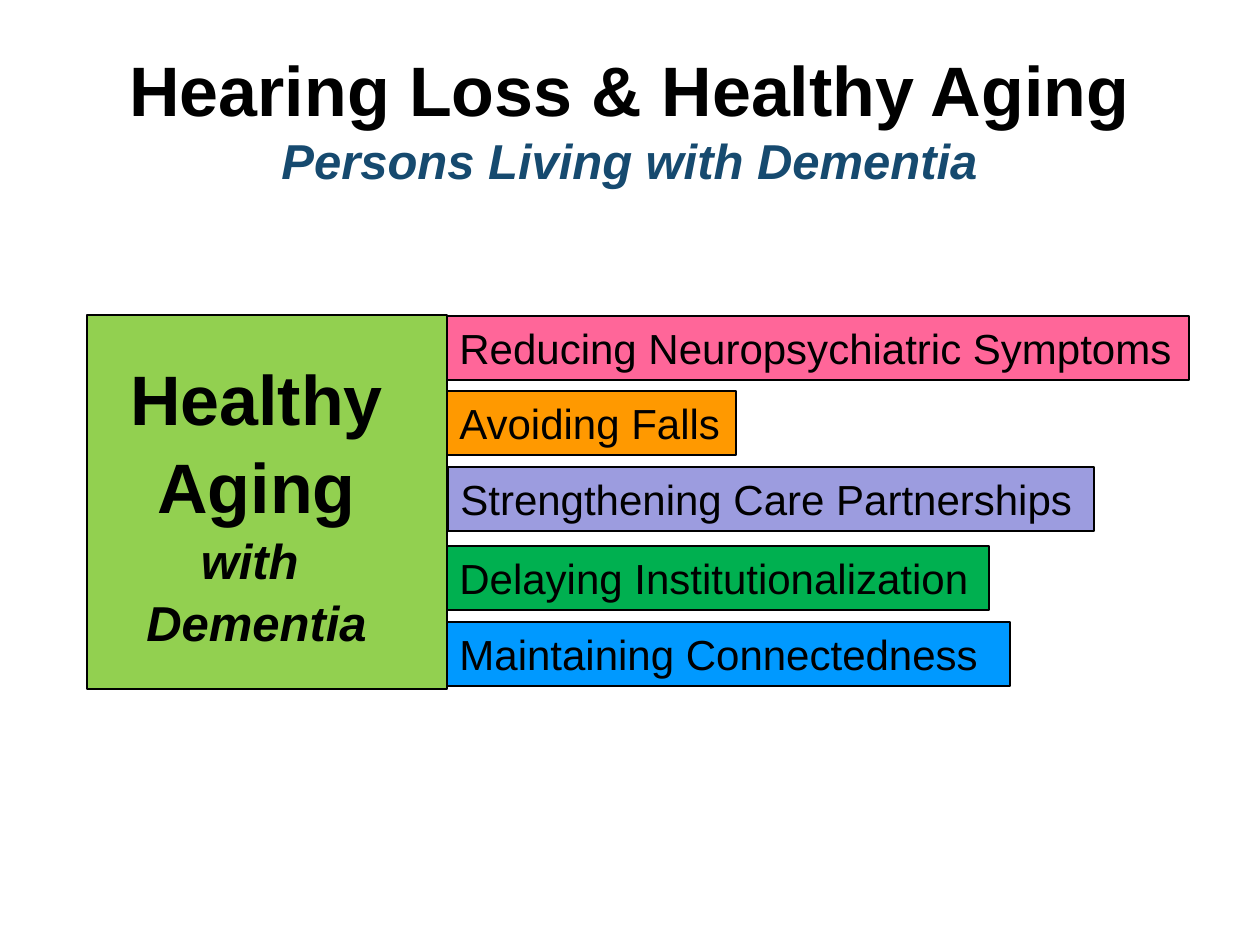
import pptx
import pptx.util
import pptx.dml.color
import pptx.enum.shapes
import pptx.enum.text

SCALE = 914400 / 126  # EMU in one px
THEME = {
    "font": "Arial", "ink": "000000", "sub": "164A6F", "panel": "92D050",
    "big": 40, "mid": 28, "bar": 24,
}
ANCHOR = pptx.enum.text.MSO_ANCHOR
CENTER = pptx.enum.text.PP_ALIGN.CENTER
RGB = pptx.dml.color.RGBColor.from_string

deck = pptx.Presentation()
deck.slide_width, deck.slide_height = (round(n * SCALE) for n in (1260, 945))
slide = deck.slides.add_slide(deck.slide_layouts[6])


def add_rect(box, fill, line):
    rect = slide.shapes.add_shape(
        pptx.enum.shapes.MSO_SHAPE.RECTANGLE, *(round(n * SCALE) for n in box))
    rect.shadow.inherit = False
    rect.fill.solid()
    rect.fill.fore_color.rgb = RGB(fill)
    rect.line.color.rgb = RGB(THEME["ink"])
    rect.line.width = pptx.util.Pt(line)
    return rect


def add_run(para, text, size, color=THEME["ink"], bold=True, italic=False):
    run = para.add_run()
    run.text = text
    run.font.name = THEME["font"]
    run.font.size = pptx.util.Pt(size)
    run.font.color.rgb = RGB(color)
    run.font.bold = bold
    run.font.italic = italic


# Title and subtitle
title = slide.shapes.add_textbox(*(round(n * SCALE) for n in (106, 32, 1047, 172)))
frame = title.text_frame
frame.word_wrap = True
frame.vertical_anchor = ANCHOR.MIDDLE
para = frame.paragraphs[0]
para.alignment = CENTER
add_run(para, "Hearing Loss & Healthy Aging", THEME["big"])
para.add_line_break()
add_run(para, "Persons Living with Dementia", THEME["mid"], THEME["sub"], italic=True)

# Green panel
add_rect((87, 315, 360, 374), THEME["panel"], 1.5)

# Goal bars: left, top, width, fill, label
bars = [
    (447, 316, 742, "FF6699", "Reducing Neuropsychiatric Symptoms"),
    (447, 391, 289, "FF9900", "Avoiding Falls"),
    (448, 467, 646, "9C9CDF", "Strengthening Care Partnerships"),
    (447, 546, 542, "00B050", "Delaying Institutionalization"),
    (447, 622, 563, "0099FF", "Maintaining Connectedness"),
]
for left, top, width, fill, label in bars:
    frame = add_rect((left, top, width, 64), fill, 0.75).text_frame
    frame.word_wrap = label != "Avoiding Falls"
    frame.vertical_anchor = ANCHOR.TOP
    para = frame.paragraphs[0]
    para.alignment = pptx.enum.text.PP_ALIGN.LEFT
    add_run(para, label, THEME["bar"], bold=False)

# Panel text
note = slide.shapes.add_textbox(*(round(n * SCALE) for n in (76, 345, 361, 301)))
frame = note.text_frame
frame.word_wrap = True
lines = [("Healthy", "big"), ("Aging", "big"), ("with ", "mid"), ("Dementia", "mid")]
for i, (text, size) in enumerate(lines):
    para = frame.add_paragraph() if i else frame.paragraphs[0]
    para.alignment = CENTER
    para.line_spacing = 1.05
    add_run(para, text, THEME[size], italic=size == "mid")

deck.save("out.pptx")
